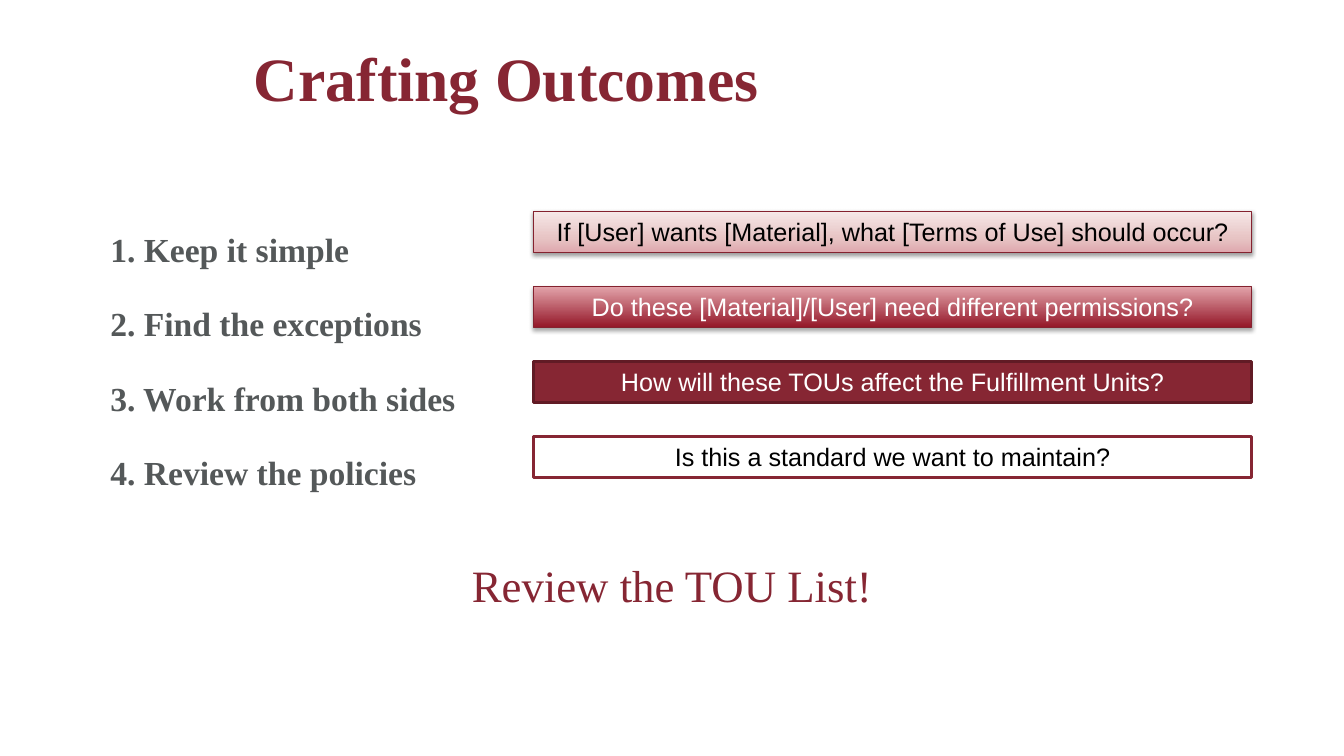
from lxml import etree
from pptx import Presentation, oxml, util as u
from pptx.dml.color import RGBColor
from pptx.enum import shapes, text
from pptx.oxml import ns

HUES = {"wine": "862633", "edge": "84222F", "dark": "611B25", "gray": "545859",
        "white": "FFFFFF", "black": "000000"}
SERIF, SANS = "Times New Roman", "Arial"
STEPS = ["1. Keep it simple", "2. Find the exceptions",
         "3. Work from both sides", "4. Review the policies"]
PALE = [(0, "DFA9AF"), (35, "E7C4C4"), (100, "F6E8E8")]
DEEP = [(0, "941728"), (100, "E3A4AB")]
BARS = [
    ("If [User] wants [Material], what [Terms of Use] should occur?",
     PALE, "edge", 0.75, "black", (38, 1.6)),
    ("Do these [Material]/[User] need different permissions?",
     DEEP, "edge", 0.75, "white", (35, 1.8)),
    ("How will these TOUs affect the Fulfillment Units?",
     "wine", "dark", 2, "white", None),
    ("Is this a standard we want to maintain?",
     "white", "wine", 2, "black", None),
]


def hue(name):
    """Return the colour of a name."""
    return RGBColor.from_string(HUES[name])


def put(item, vals):
    """Set attributes from a dict."""
    for key, val in vals.items():
        setattr(item, key, val)


def write(shape, lines, font, size, tint, bold=False, anchor="TOP", **form):
    """Fill a shape with styled paragraphs."""
    frame = shape.text_frame
    put(frame, {"word_wrap": True, "vertical_anchor": text.MSO_ANCHOR[anchor]})
    frame.text = "\n".join(lines)
    for para in frame.paragraphs:
        put(para, form)
        put(para.font, {"name": font, "size": u.Pt(size), "bold": bold})
        para.font.color.rgb = hue(tint)
    return frame


def add_text(slide, spot, lines, *style, **form):
    """Add a text box at a spot in centimetres."""
    box = slide.shapes.add_textbox(*map(u.Cm, spot))
    return write(box, lines, *style, **form)


def shade(shape, stops):
    """Give a shape a gradient that rises from its foot."""
    marks = "".join(f'<a:gs pos="{pos * 1000}"><a:srgbClr val="{tint}"/></a:gs>'
                    for pos, tint in stops)
    grad = oxml.parse_xml(
        f'<a:gradFill {ns.nsdecls("a")} rotWithShape="1"><a:gsLst>{marks}</a:gsLst>'
        '<a:lin ang="16200000" scaled="0"/></a:gradFill>')
    shape.fill.background()
    old = shape._element.spPr.find(ns.qn("a:noFill"))
    old.getparent().replace(old, grad)


def cast(shape, alpha, dist):
    """Drop a soft shadow below a shape."""
    glow = shape._element.spPr.find(ns.qn("a:effectLst"))
    drop = etree.SubElement(glow, ns.qn("a:outerShdw"), blurRad=str(u.Pt(3.1)),
                            dist=str(u.Pt(dist)), dir="5400000", rotWithShape="0")
    tone = etree.SubElement(drop, ns.qn("a:srgbClr"), val=HUES["black"])
    etree.SubElement(tone, ns.qn("a:alpha"), val=str(alpha * 1000))


def add_bar(slide, row, words, fill, edge, width, tint, drop):
    """Add one question bar in its row."""
    bar = slide.shapes.add_shape(
        shapes.MSO_SHAPE.RECTANGLE, u.Cm(13.44), u.Cm(5.33 + 1.89 * row),
        u.Cm(18.11), u.Cm(1.03))
    bar.shadow.inherit = False
    if isinstance(fill, list):
        shade(bar, fill)
    else:
        bar.fill.solid()
        bar.fill.fore_color.rgb = hue(fill)
    bar.line.color.rgb = hue(edge)
    bar.line.width = u.Pt(width)
    if drop:
        cast(bar, *drop)
    write(bar, [words], SANS, 18, tint, alignment=text.PP_ALIGN.CENTER)


def main():
    """Build the slide."""
    deck = Presentation()
    put(deck, {"slide_width": u.Cm(33.87), "slide_height": u.Cm(19.05)})
    slide = deck.slides.add_slide(deck.slide_layouts[6])
    frame = add_text(slide, (1.9, 5.13, 13.72, 8.79), STEPS, SERIF, 24, "gray", True,
                     line_spacing=1.5, space_before=u.Pt(10))
    for para in frame.paragraphs:
        props = para._p.get_or_add_pPr()
        props.set("marL", str(u.Cm(1.27)))
        props.set("indent", str(u.Cm(-0.64)))
    frame.paragraphs[0].space_before = u.Pt(0)
    add_text(slide, (6.15, 1.12, 23.75, 1.85), ["Crafting Outcomes"], SERIF, 44,
             "wine", True, "MIDDLE", line_spacing=0.9)
    for row, bar in enumerate(BARS):
        add_bar(slide, row, *bar)
    add_text(slide, (6.93, 13.92, 20.02, 1.63), ["Review the TOU List!"], SERIF, 32,
             "wine", alignment=text.PP_ALIGN.CENTER)
    deck.save("out.pptx")


if __name__ == "__main__":
    main()
